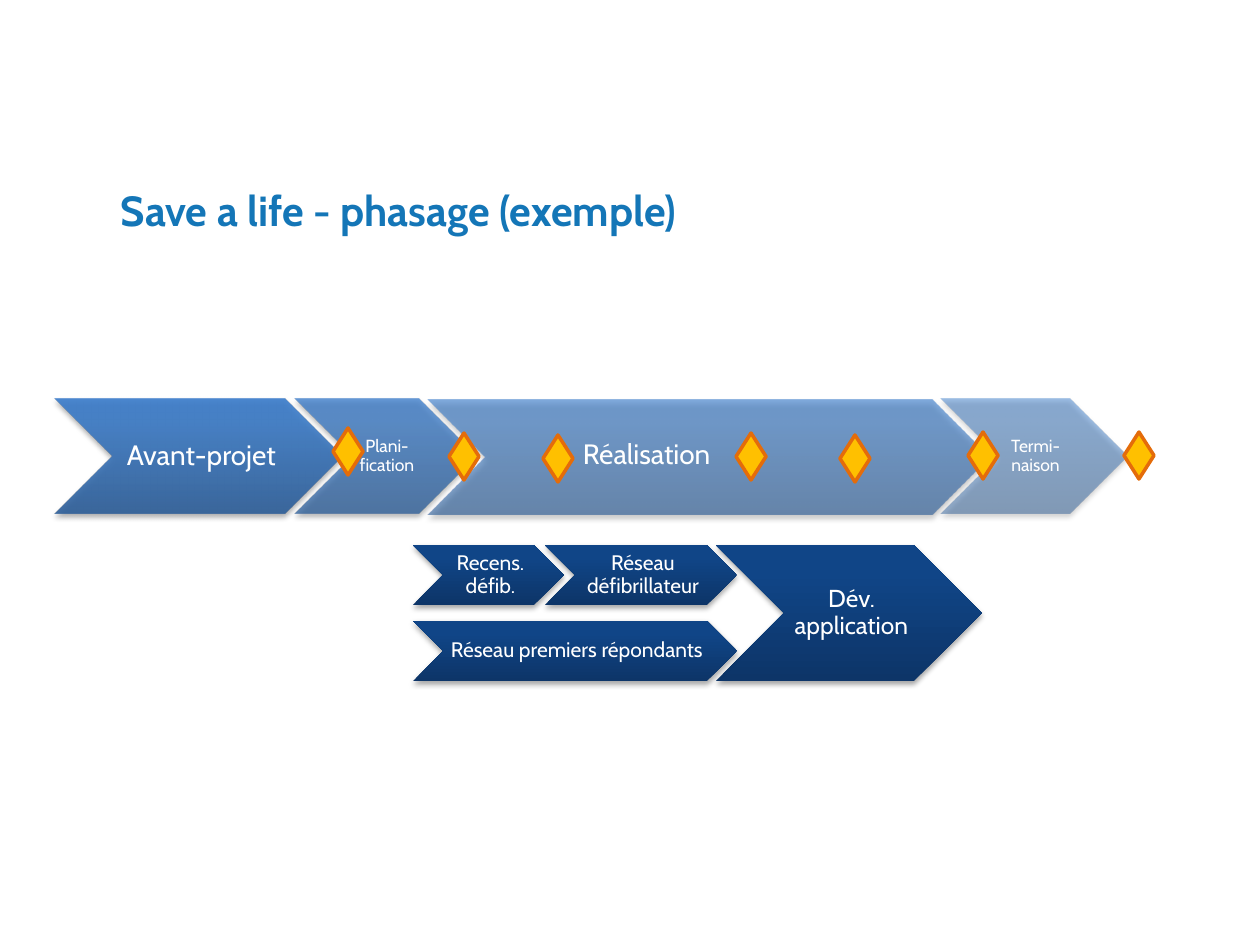
import pptx
import pptx.dml.color
import pptx.enum.shapes
import pptx.enum.text
import pptx.oxml
import pptx.oxml.ns
import pptx.util

RGBColor = pptx.dml.color.RGBColor
Shape = pptx.enum.shapes.MSO_SHAPE
Align = pptx.enum.text.PP_ALIGN
Anchor = pptx.enum.text.MSO_ANCHOR

FONT = "Cabin"
WHITE = RGBColor(0xFF, 0xFF, 0xFF)
TITLE_BLUE = RGBColor(0x14, 0x76, 0xB7)
GOLD = RGBColor(0xFF, 0xC0, 0x00)
ORANGE = RGBColor(0xE4, 0x6C, 0x0A)
# Gradient colours run from the bottom of a chevron to its top
PHASE_BLUES = (RGBColor(0x2F, 0x5F, 0x99), RGBColor(0x3D, 0x7C, 0xC7), RGBColor(0x3A, 0x7C, 0xCB))
TASK_BLUES = (RGBColor(0x0D, 0x35, 0x68), RGBColor(0x10, 0x45, 0x87), RGBColor(0x0E, 0x45, 0x8A))
STOPS = (0, 80, 100)

PX_PER_INCH = 126
DIAMOND_SIZE = (30, 47)


def px(length):
    return pptx.util.Emu(round(length * 914400 / PX_PER_INCH))


def emu_box(box):
    return [px(length) for length in box]


def parse_xml(xml):
    return pptx.oxml.parse_xml(xml.replace(">", " " + pptx.oxml.ns.nsdecls("a") + ">", 1))


def shadow_effect():
    return parse_xml(
        '<a:effectLst><a:outerShdw blurRad="40000" dist="23000" dir="5400000" rotWithShape="0">'
        '<a:srgbClr val="000000"><a:alpha val="35000"/></a:srgbClr></a:outerShdw></a:effectLst>')


def gradient_fill(colors, opacity):
    stops = "".join(
        f'<a:gs pos="{stop * 1000}"><a:srgbClr val="{color}">'
        f'<a:alpha val="{opacity * 1000}"/></a:srgbClr></a:gs>'
        for stop, color in zip(STOPS, colors))
    return parse_xml(f'<a:gradFill><a:gsLst>{stops}</a:gsLst>'
                     '<a:lin ang="16200000" scaled="0"/></a:gradFill>')


def add_text(shapes, box, text, size, color=WHITE, bold=False, align=Align.LEFT,
             anchor=Anchor.MIDDLE, insets=(13, 6, 13, 6), spacing=None):
    """Add a text box; insets are left, top, right, bottom. Returns its span."""
    frame = shapes.add_textbox(*emu_box(box)).text_frame
    frame.word_wrap = True
    frame.vertical_anchor = anchor
    (frame.margin_left, frame.margin_top,
     frame.margin_right, frame.margin_bottom) = emu_box(insets)
    para = frame.paragraphs[0]
    para.alignment = align
    if spacing:
        para.line_spacing = spacing
    span = para.add_run()
    span.text = text
    span.font.size = pptx.util.Pt(size)
    span.font.name = FONT
    span.font.bold = bold
    span.font.color.rgb = color
    return span


def add_title(page, box, text):
    span = add_text(page.shapes, box, text, 24, color=TITLE_BLUE, bold=True, insets=(19,) * 4)
    fill = span.font.fill._xPr.find(pptx.oxml.ns.qn("a:solidFill"))
    fill.addnext(shadow_effect())


def add_chevron(page, box, text, size, colors, opacity=100):
    """Add a chevron whose label fills the body between notch and point."""
    left, top, width, height = box
    group = page.shapes.add_group_shape()
    chevron = group.shapes.add_shape(Shape.CHEVRON, *emu_box(box))
    chevron.line.fill.background()
    properties = chevron._element.spPr
    properties.find(pptx.oxml.ns.qn("a:ln")).addprevious(gradient_fill(colors, opacity))
    properties.append(shadow_effect())
    if text:
        body = (left + height / 2, top, width - height, height)
        add_text(group.shapes, body, text, size, align=Align.CENTER,
                 insets=(size // 2, 2, 2, 2), spacing=0.9)


def add_phases(page, box):
    left, top, height = box
    phases = [
        (0, 0, 287, "Avant-projet", 16, 90),
        (240, 0, 181, "Plani-fication", 10, 77),
        (373, 1, 561, "", 16, 63),
        (886, 0, 186, "Termi-naison", 10, 50),
    ]
    for x, y, width, text, size, opacity in phases:
        add_chevron(page, (left + x, top + y, width, height), text, size, PHASE_BLUES, opacity)
    add_text(page.shapes, (left + 515, top + 32, 166, 47), "Réalisation", 16, anchor=Anchor.TOP)


def add_tasks(page, box):
    left, top, height = box
    row = 60
    tasks = [
        (303, 0, 266, height, "Dév. application", 14),
        (0, 0, 151, row, "Recens. défib.", 12),
        (0, height - row, 324, row, "Réseau premiers répondants", 12),
        (132, 0, 192, row, "Réseau défibrillateur", 12),
    ]
    for x, y, width, task_height, text, size in tasks:
        add_chevron(page, (left + x, top + y, width, task_height), text, size, TASK_BLUES)


def add_milestones(page, corners):
    for corner in corners:
        diamond = page.shapes.add_shape(Shape.FLOWCHART_DECISION, *emu_box(corner + DIAMOND_SIZE))
        diamond.shadow.inherit = False
        diamond.fill.solid()
        diamond.fill.fore_color.rgb = GOLD
        diamond.line.color.rgb = ORANGE
        diamond.line.width = pptx.util.Pt(2)


def main():
    deck = pptx.Presentation()
    deck.slide_width, deck.slide_height = px(1260), px(945)
    page = deck.slides.add_slide(deck.slide_layouts[6])
    add_phases(page, (55, 399, 115))
    add_title(page, (102, 155, 1227, 110), "Save a life - phasage (exemple)")
    add_tasks(page, (413, 545, 136))
    add_milestones(page, [(333, 428), (449, 433), (543, 435), (736, 433),
                          (840, 435), (968, 432), (1124, 432)])
    deck.save("out.pptx")


if __name__ == "__main__":
    main()
